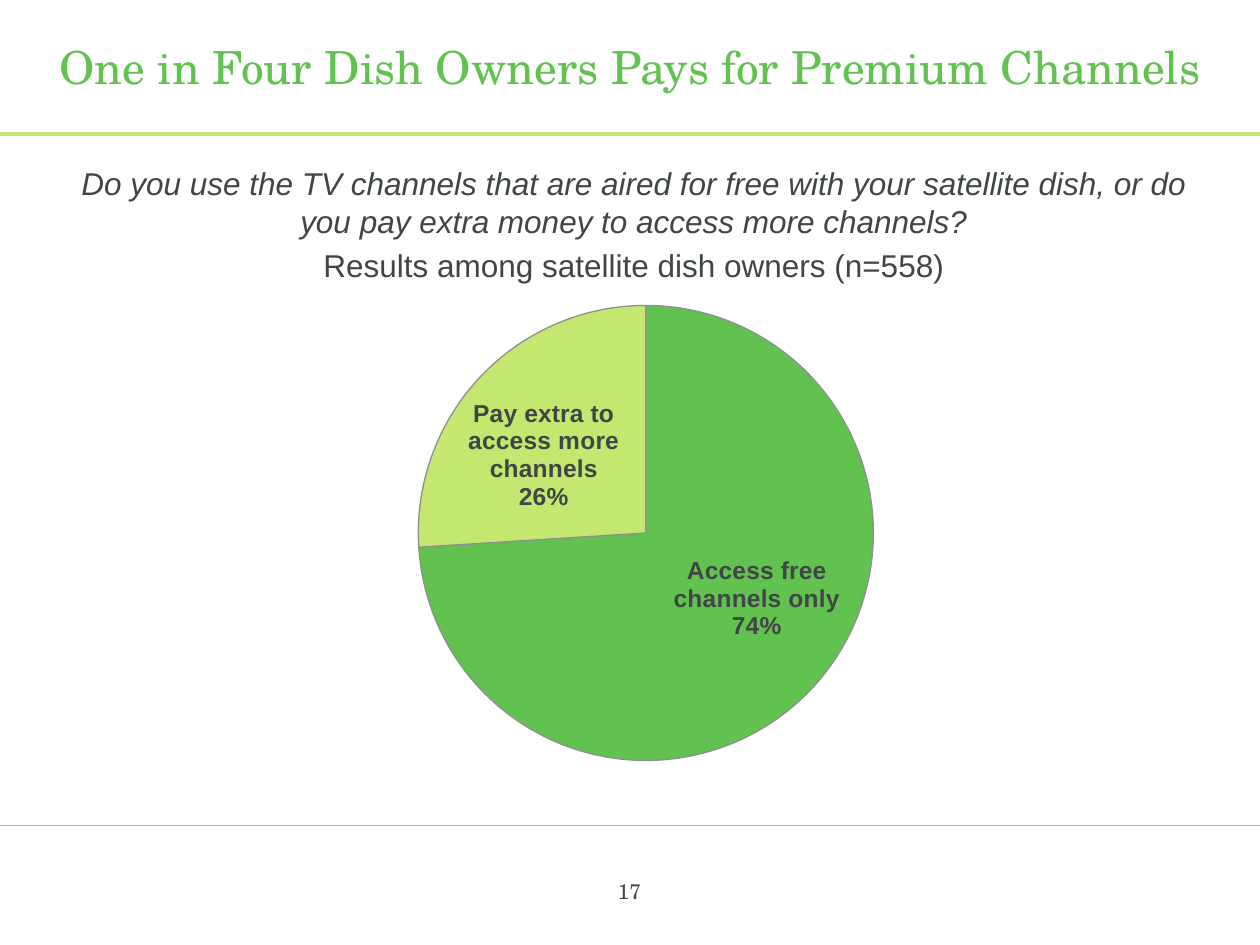
from lxml import etree
from pptx import Presentation
from pptx import util as u
from pptx.chart.data import CategoryChartData
from pptx.dml.color import RGBColor
from pptx.enum import chart as ch, shapes, text
from pptx.oxml import parse_xml
from pptx.oxml.ns import nsdecls, qn

GREEN, LIME, DARK = "61C250", "C3E76F", "404545"
SERIF, SANS = "TeX Gyre Schola", "Arial"


def color(code):
    return RGBColor.from_string(code)


def style(font, name, size, code):
    font.name, font.size = name, u.Pt(size)
    font.color.rgb = color(code)


def inches(*box):
    return [u.Inches(n) for n in box]


def add_rule(slide, top, code, width):
    ends = inches(0, top, 10, top)
    rule = slide.shapes.add_connector(shapes.MSO_CONNECTOR.STRAIGHT, *ends)
    rule.line.color.rgb = color(code)
    rule.line.width = u.Pt(width)
    etree.SubElement(rule._element.spPr, qn("a:effectLst"))


def set_title(slide, box, words):
    title = slide.shapes.title
    title.left, title.top, title.width, title.height = inches(*box)
    frame = title.text_frame
    frame.text = words
    frame.word_wrap = True
    frame.auto_size = text.MSO_AUTO_SIZE.NONE
    frame.vertical_anchor = text.MSO_ANCHOR.MIDDLE
    para = frame.paragraphs[0]
    para.alignment = text.PP_ALIGN.LEFT
    style(para.runs[0].font, SERIF, 26, GREEN)


def add_text(slide, box, lines, name, size):
    frame = slide.shapes.add_textbox(*inches(*box)).text_frame
    frame.word_wrap = True
    frame.text = "\n".join(lines)
    for n, para in enumerate(frame.paragraphs):
        para.alignment = text.PP_ALIGN.CENTER
        if n:
            para.space_before = u.Pt(size * 0.2)
        style(para.runs[0].font, name, size, DARK)
    return frame


def place_plot(chart, x, y, w, h):
    area = chart._chartSpace.chart.plotArea
    for old in area.findall(qn("c:layout")):
        area.remove(old)
    sizes = "".join(f'<c:{tag} val="{val}"/>'
                    for tag, val in zip("xywh", (x, y, w, h)))
    area.insert(0, parse_xml(
        f'<c:layout {nsdecls("c")}><c:manualLayout>'
        '<c:layoutTarget val="inner"/><c:xMode val="edge"/>'
        f'<c:yMode val="edge"/>{sizes}</c:manualLayout></c:layout>'))


def add_pie(slide, box, shares):
    data = CategoryChartData(number_format="0%")
    data.categories = list(shares)
    data.add_series("Series 1", list(shares.values()))
    kind = ch.XL_CHART_TYPE.PIE
    chart = slide.shapes.add_chart(kind, *inches(*box), data).chart
    chart.has_legend = chart.has_title = False
    style(chart.font, SANS, 10, DARK)
    place_plot(chart, 0.3, 0.06, 0.43, 0.83)

    plot = chart.plots[0]
    plot.vary_by_categories = True
    for n, code in enumerate((GREEN, LIME)):
        part = plot.series[0].points[n].format
        part.fill.solid()
        part.fill.fore_color.rgb = color(code)
        part.line.color.rgb = color("8E908F")
        part.line.width = u.Pt(0.75)

    plot.has_data_labels = True
    labels = plot.data_labels
    style(labels.font, SANS, 14, DARK)
    labels.font.bold = True
    labels.number_format = "0%"
    labels.number_format_is_linked = False
    labels.position = ch.XL_LABEL_POSITION.BEST_FIT
    labels.show_category_name = labels.show_value = True
    labels.show_percentage = False
    mark = parse_xml(f'<c:separator {nsdecls("c")}>\n</c:separator>')
    labels._element.find(qn("c:showBubbleSize")).addnext(mark)


def main():
    deck = Presentation()
    deck.slide_width, deck.slide_height = inches(10, 7.5)
    slide = deck.slides.add_slide(deck.slide_layouts[5])
    add_rule(slide, 6.55, "B5B6B3", 0.25)
    add_rule(slide, 1.06, LIME, 2.25)
    set_title(slide, (0.37, 0.21, 9.36, 0.64),
              "One in Four Dish Owners Pays for Premium Channels")
    add_text(slide, (3.83, 6.92, 2.33, 0.52), ["17"], SERIF, 12)
    add_pie(slide, (0.8, 2.16, 8.4, 4.36),
            {"Access free channels only": 0.74,
             "Pay extra to access more channels": 0.26})
    intro = add_text(slide, (0.37, 1.25, 9.32, 0.91), [
        "Do you use the TV channels that are aired for free with your "
        "satellite dish, or do you pay extra money to access more channels?",
        "Results among satellite dish owners (n=558)"], SANS, 18)
    intro.paragraphs[0].runs[0].font.italic = True
    deck.save("out.pptx")


if __name__ == "__main__":
    main()
